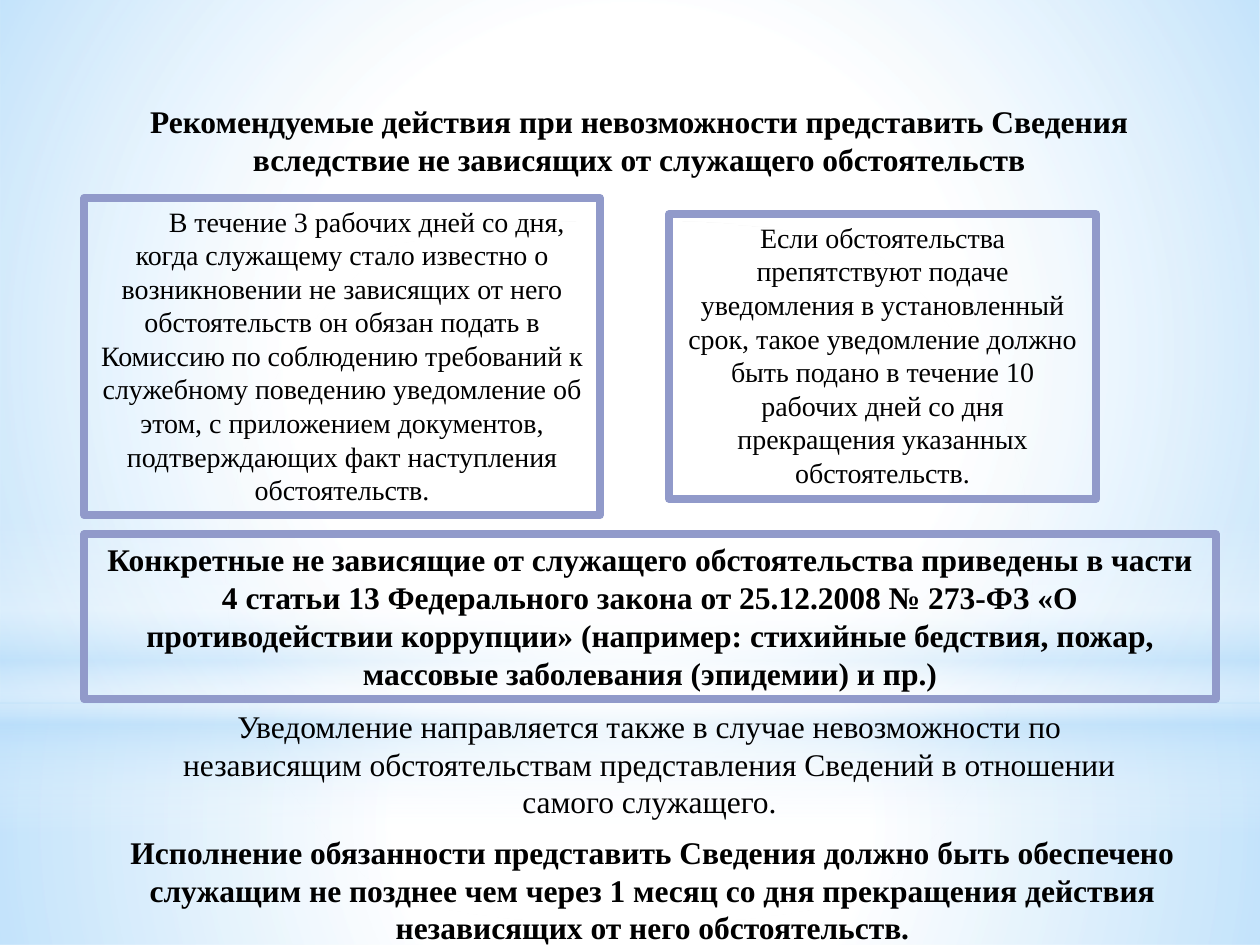
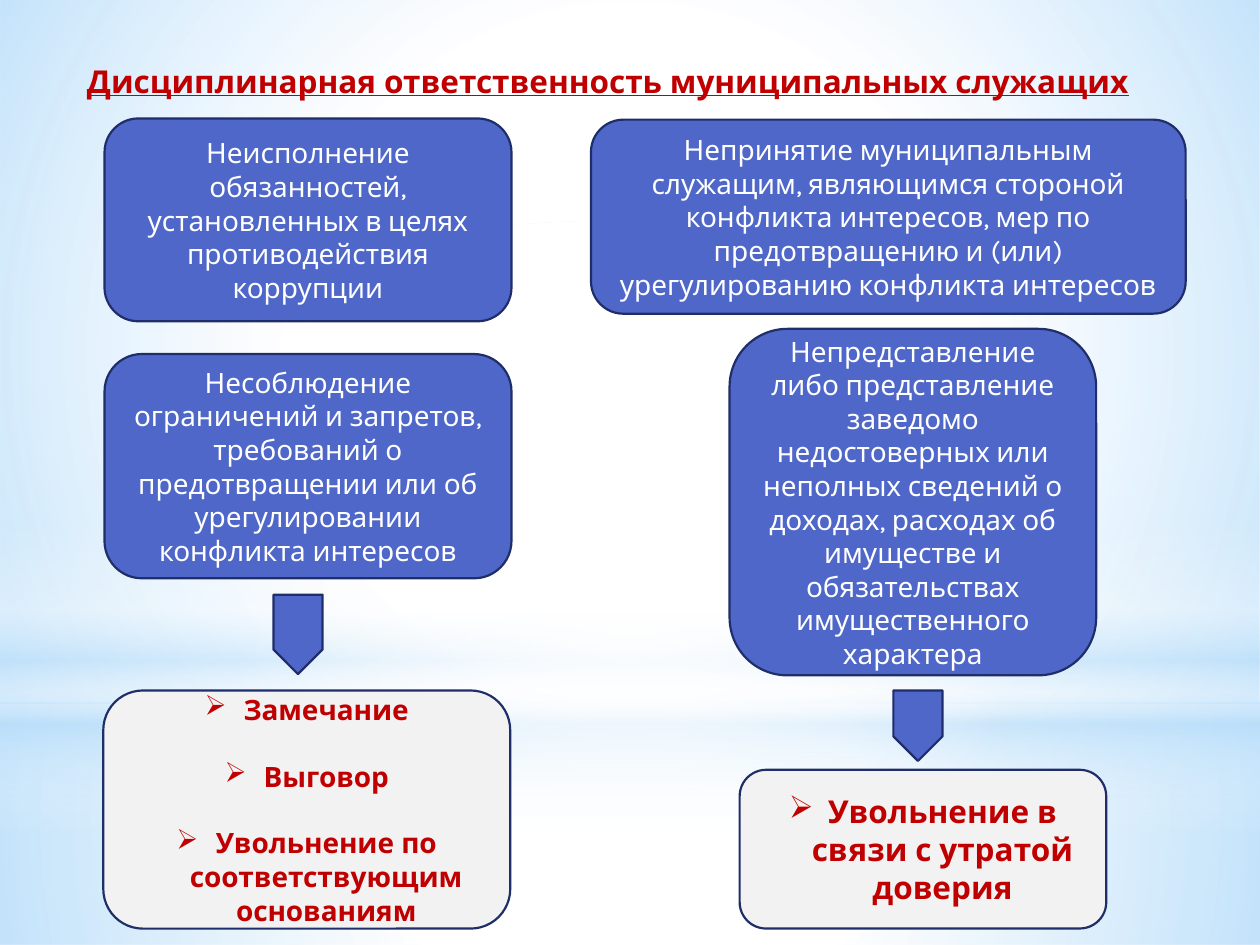
"""Build two slides on duties and liability of municipal employees."""
from pptx import Presentation
from pptx.dml.color import RGBColor
from pptx.enum.shapes import MSO_SHAPE
from pptx.enum.text import MSO_ANCHOR, MSO_AUTO_SIZE, PP_ALIGN
from pptx.oxml import parse_xml
from pptx.oxml.ns import nsdecls, qn
from pptx.util import Pt

PX = 9144
RECT, OVAL = MSO_SHAPE.RECTANGLE, MSO_SHAPE.OVAL
ROUND, DOWN = MSO_SHAPE.ROUNDED_RECTANGLE, MSO_SHAPE.DOWN_ARROW
TOP, MIDDLE = MSO_ANCHOR.TOP, MSO_ANCHOR.MIDDLE
CENTER = PP_ALIGN.CENTER
GROW, FIXED = MSO_AUTO_SIZE.SHAPE_TO_FIT_TEXT, MSO_AUTO_SIZE.NONE
SERIF, SANS = "Times New Roman", "Karla"
COLORS = {
    "white": "FFFFFF", "sky": "B4DCFA", "black": "000000", "frame": "919ACA",
    "blue": "4E67C8", "navy": "1F2E69", "red": "C00000", "gray": "F2F2F2",
}
RADIAL = '<a:path path="circle"><a:fillToRect l="50000" t="50000" r="50000" b="50000"/></a:path>'
LINEAR = '<a:lin ang="5400000" scaled="0"/>'
BACKDROP = [
    (RECT, (0, 558, 1000, 192), RADIAL,
     [(0, "white", 91), (37, "white", 76), (100, "sky", 79)]),
    (RECT, (0, 0, 1000, 558), RADIAL,
     [(0, "white", 89), (48, "white", 62), (100, "sky", 79)]),
    (RECT, (0, 412, 1000, 250), LINEAR,
     [(0, "white", 0), (29, "white", 30), (45, "sky", 40),
      (55, "white", 26), (65, "sky", 60), (100, "white", 0)]),
    (OVAL, (0, 175, 1000, 558), RADIAL, [(0, "white", 100), (56, "white", 0)]),
]


def rgb(name):
    """Return the named colour."""
    return RGBColor.from_string(COLORS[name])


class SlideBuilder:
    """Holds the style and the current slide."""

    def __init__(self):
        """Open a deck and set the slide size."""
        self.deck = Presentation()
        self.deck.slide_width, self.deck.slide_height = 1000 * PX, 750 * PX
        self.layout = self.deck.slide_layouts[5]
        self.font = SERIF
        self.page = None

    def add_page(self, font):
        """Start a slide whose text uses the given font."""
        self.page = self.deck.slides.add_slide(self.layout)
        self.font = font

    def share_backdrop(self):
        """Draw the gradients and move them into the layout."""
        tree = self.layout.shapes.element
        for order, (kind, place, direction, stops) in enumerate(BACKDROP):
            shape = self.shape(kind, place)
            shape.line.fill.background()
            shape.fill.background()
            self.gradient(shape, direction, stops)
            shape.element.nvSpPr.cNvPr.set("id", str(100 + order))
            tree.insert(2 + order, shape.element)

    def gradient(self, shape, direction, stops):
        """Fill a shape with translucent colour stops."""
        marks = "".join(
            f'<a:gs pos="{position * 1000}"><a:srgbClr val="{COLORS[color]}">'
            f'<a:alpha val="{alpha * 1000}"/></a:srgbClr></a:gs>'
            for position, color, alpha in stops)
        properties = shape.element.spPr
        properties.replace(properties.find(qn("a:noFill")), parse_xml(
            f'<a:gradFill {nsdecls("a")} rotWithShape="1">'
            f'<a:gsLst>{marks}</a:gsLst>{direction}</a:gradFill>'))

    def shape(self, kind, place, fill="blue", line="navy"):
        """Add a preset shape without shadow."""
        shape = self.page.shapes.add_shape(kind, *(PX * side for side in place))
        shape.shadow.inherit = False
        shape.fill.solid()
        shape.fill.fore_color.rgb = rgb(fill)
        shape.line.color.rgb = rgb(line)
        shape.line.width = Pt(1.25)
        return shape

    def fill_text(self, box, lines, size, color="black", bold=False, anchor=TOP, fit=GROW):
        """Put centred paragraphs in a box."""
        frame = box.text_frame
        frame.text = "\n".join(lines)
        frame.word_wrap = True
        frame.auto_size = fit
        frame.vertical_anchor = anchor
        for para in frame.paragraphs:
            para.alignment = CENTER
            for span in para.runs:
                span.font.name = self.font
                span.font.size = Pt(size)
                span.font.bold = bold
                span.font.color.rgb = rgb(color)
        return frame

    def title(self, place, text, color="black", underline=False, wrap=True):
        """Move and format the title placeholder."""
        box = self.page.shapes.title
        box.left, box.top, box.width, box.height = (PX * side for side in place)
        frame = self.fill_text(box, [text], 18, color, bold=True)
        frame.word_wrap = wrap
        frame.paragraphs[0].runs[0].font.underline = underline

    def note(self, place, text, size=18, bold=False, framed=False, indent=0):
        """Add a text box, framed on request."""
        box = self.page.shapes.add_textbox(*(PX * side for side in place))
        frame = self.fill_text(box, [text], size, bold=bold)
        if framed:
            box.line.color.rgb = rgb("frame")
            box.line.width = Pt(4.5)
        if indent:
            frame.paragraphs[0]._p.get_or_add_pPr().set("indent", str(indent * PX))

    def card(self, place, text):
        """Add a blue card naming an offence."""
        self.fill_text(self.shape(ROUND, place), [text], 16, "white", anchor=MIDDLE, fit=FIXED)

    def penalties(self, place, lines, size):
        """Add a grey card with bulleted penalties."""
        card = self.shape(ROUND, place, "gray")
        frame = self.fill_text(card, lines, size, "red", True, MIDDLE, FIXED)
        for order, para in enumerate(frame.paragraphs):
            if order:
                para.space_before = Pt(19)
            properties = para._p.get_or_add_pPr()
            properties.set("marL", str(31 * PX))
            properties.set("indent", str(-31 * PX))
            properties.append(parse_xml(f'<a:buChar {nsdecls("a")} char="➢"/>'))

    def arrow(self, place):
        """Add a pentagon that points down."""
        arrow = self.shape(DOWN, place)
        arrow.adjustments[0] = 1
        arrow.adjustments[1] = 0.5


def build_actions(builder):
    """Fill the slide on recommended actions."""
    builder.title((106, 76, 803, 71), "Рекомендуемые действия при невозможности представить "
                  "Сведения вследствие не зависящих от служащего обстоятельств")
    builder.note((67, 157, 409, 252), "В течение 3 рабочих дней со дня, когда служащему стало "
                 "известно о возникновении не зависящих от него обстоятельств он обязан подать "
                 "в Комиссию по соблюдению требований к служебному поведению уведомление об "
                 "этом, с приложением документов, подтверждающих факт наступления "
                 "обстоятельств.", size=16, framed=True, indent=39)
    builder.note((531, 170, 339, 226), "Если обстоятельства препятствуют подаче уведомления в "
                 "установленный срок, такое уведомление должно быть подано в течение 10 рабочих "
                 "дней со дня прекращения указанных обстоятельств.", size=16, framed=True)
    builder.note((67, 424, 898, 131), "Конкретные не зависящие от служащего обстоятельства "
                 "приведены в части 4 статьи 13 Федерального закона от 25.12.2008 № 273-ФЗ "
                 "«О противодействии коррупции» (например: стихийные бедствия, пожар, массовые "
                 "заболевания (эпидемии) и пр.)", bold=True, framed=True)
    builder.note((110, 556, 811, 101), "Уведомление направляется также в случае невозможности "
                 "по независящим обстоятельствам представления Сведений в отношении самого "
                 "служащего.")
    builder.note((81, 656, 874, 101), "Исполнение обязанности представить Сведения должно быть "
                 "обеспечено служащим не позднее чем через 1 месяц со дня прекращения действия "
                 "независящих от него обстоятельств.", bold=True)


def build_liability(builder):
    """Fill the slide on disciplinary liability."""
    builder.title((53, 44, 859, 40), "Дисциплинарная ответственность муниципальных служащих",
                  "red", underline=True, wrap=False)
    builder.card((83, 94, 323, 161), "Неисполнение обязанностей, установленных в целях "
                 "противодействия коррупции")
    builder.card((83, 281, 323, 178), "Несоблюдение ограничений и запретов, требований о "
                 "предотвращении или об урегулировании конфликта интересов")
    builder.card((469, 95, 472, 154), "Непринятие муниципальным служащим, являющимся стороной "
                 "конфликта интересов, мер по предотвращению и (или) урегулированию конфликта "
                 "интересов")
    builder.card((579, 261, 291, 275), "Непредставление либо представление заведомо "
                 "недостоверных или неполных сведений о доходах, расходах об имуществе и "
                 "обязательствах имущественного характера")
    builder.arrow((217, 472, 39, 63))
    builder.arrow((709, 548, 39, 56))
    builder.penalties((82, 548, 323, 189), ["Замечание", "Выговор",
                      "Увольнение по соответствующим основаниям"], 16)
    builder.penalties((587, 611, 291, 126), ["Увольнение в связи с утратой доверия"], 18)


def main():
    """Build and save the deck."""
    builder = SlideBuilder()
    builder.add_page(SERIF)
    builder.share_backdrop()
    build_actions(builder)
    builder.add_page(SANS)
    build_liability(builder)
    builder.deck.save("out.pptx")


if __name__ == "__main__":
    main()
